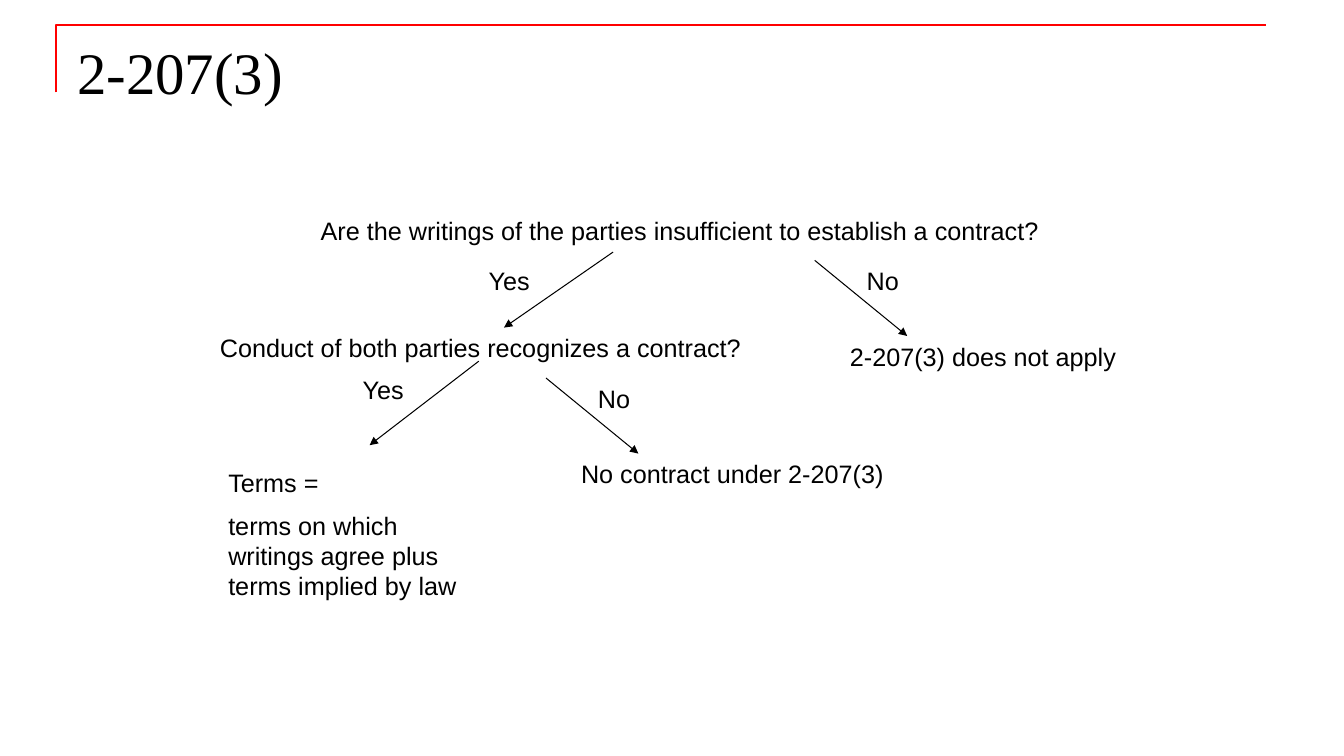
from pptx import Presentation
from pptx.dml.color import RGBColor
from pptx.enum.text import MSO_ANCHOR, MSO_AUTO_SIZE, PP_ALIGN
from pptx.enum.shapes import MSO_CONNECTOR
from pptx.oxml.ns import qn
from pptx.util import Pt
from lxml.etree import SubElement

TITLE = "2-207(3)"
NOTES = [
    (222, 150, 534, ["Are the writings of the parties insufficient to establish a contract?"]),
    (342, 186, 54, ["Yes"]),
    (612, 186, 48, ["No"]),
    (600, 240, 216, ["2-207(3) does not apply"]),
    (150, 234, 390, ["Conduct of both parties recognizes a contract?"]),
    (252, 264, 54, ["Yes"]),
    (156, 330, 180, ["Terms =", "terms on which writings agree plus terms implied by law"]),
    (420, 270, 48, ["No"]),
    (408, 324, 258, ["No contract under 2-207(3)"]),
]
ARROWS = [
    (438, 180, 360, 234),
    (582, 186, 648, 240),
    (342, 258, 264, 318),
    (390, 270, 456, 324),
]
FRAME = [(40, 66), (40, 18), (904, 18)]

THEME = {
    "ink": RGBColor(0, 0, 0),
    "rule": RGBColor(255, 0, 0),
    "head": {"name": "Times New Roman", "size": Pt(42), "bold": False},
    "body": {"name": "Arial", "size": Pt(18), "bold": False},
    "gap": Pt(9),
    "line": 29,
    "thin": Pt(0.75),
    "thick": Pt(1.5),
}
FIT = {"word_wrap": True, "vertical_anchor": MSO_ANCHOR.TOP}


def apply(item, form):
    for key, value in form.items():
        setattr(item, key, value)


def write(frame, lines, font, fit):
    apply(frame, {**FIT, "auto_size": fit})
    for i, line in enumerate(lines):
        para = frame.add_paragraph() if i else frame.paragraphs[0]
        para.alignment = PP_ALIGN.LEFT
        if i:
            para.space_before = THEME["gap"]
        run = para.add_run()
        run.text = line
        apply(run.font, font)
        run.font.color.rgb = THEME["ink"]


def stroke(line, color, width):
    line.color.rgb = color
    line.width = width


def add_note(slide, left, top, width, lines):
    tall = 104 if len(lines) > 1 else THEME["line"]
    box = slide.shapes.add_textbox(Pt(left), Pt(top), Pt(width), Pt(tall))
    write(box.text_frame, lines, THEME["body"], MSO_AUTO_SIZE.SHAPE_TO_FIT_TEXT)


def add_arrow(slide, ends):
    arrow = slide.shapes.add_connector(MSO_CONNECTOR.STRAIGHT, *map(Pt, ends))
    stroke(arrow.line, THEME["ink"], THEME["thin"])
    SubElement(arrow.line._get_or_add_ln(), qn("a:tailEnd"), type="triangle")
    SubElement(arrow._element.spPr, qn("a:effectLst"))


def add_frame(slide):
    first, *rest = [(Pt(x), Pt(y)) for x, y in FRAME]
    pen = slide.shapes.build_freeform(*first)
    pen.add_line_segments(rest, close=False)
    shape = pen.convert_to_shape()
    shape.shadow.inherit = False
    shape.fill.background()
    stroke(shape.line, THEME["rule"], THEME["thick"])


def main():
    deck = Presentation()
    apply(deck, {"slide_width": Pt(960), "slide_height": Pt(540)})
    slide = deck.slides.add_slide(deck.slide_layouts[5])
    add_frame(slide)
    title = slide.shapes.title
    apply(title, {"left": Pt(48), "top": Pt(22), "width": Pt(864), "height": Pt(90)})
    write(title.text_frame, [TITLE], THEME["head"], MSO_AUTO_SIZE.NONE)
    for note in NOTES:
        add_note(slide, *note)
    for ends in ARROWS:
        add_arrow(slide, ends)
    deck.save("out.pptx")


if __name__ == "__main__":
    main()
